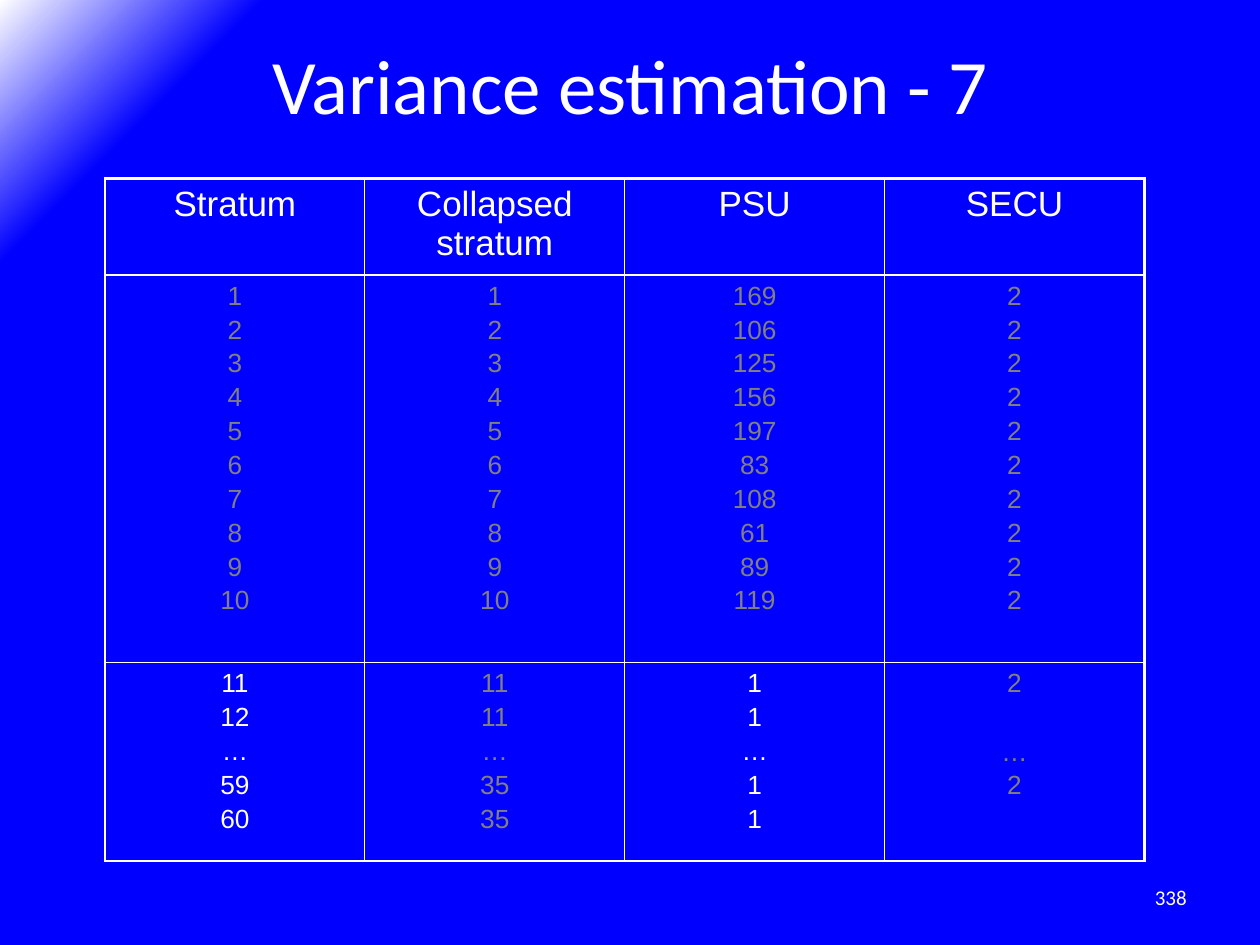
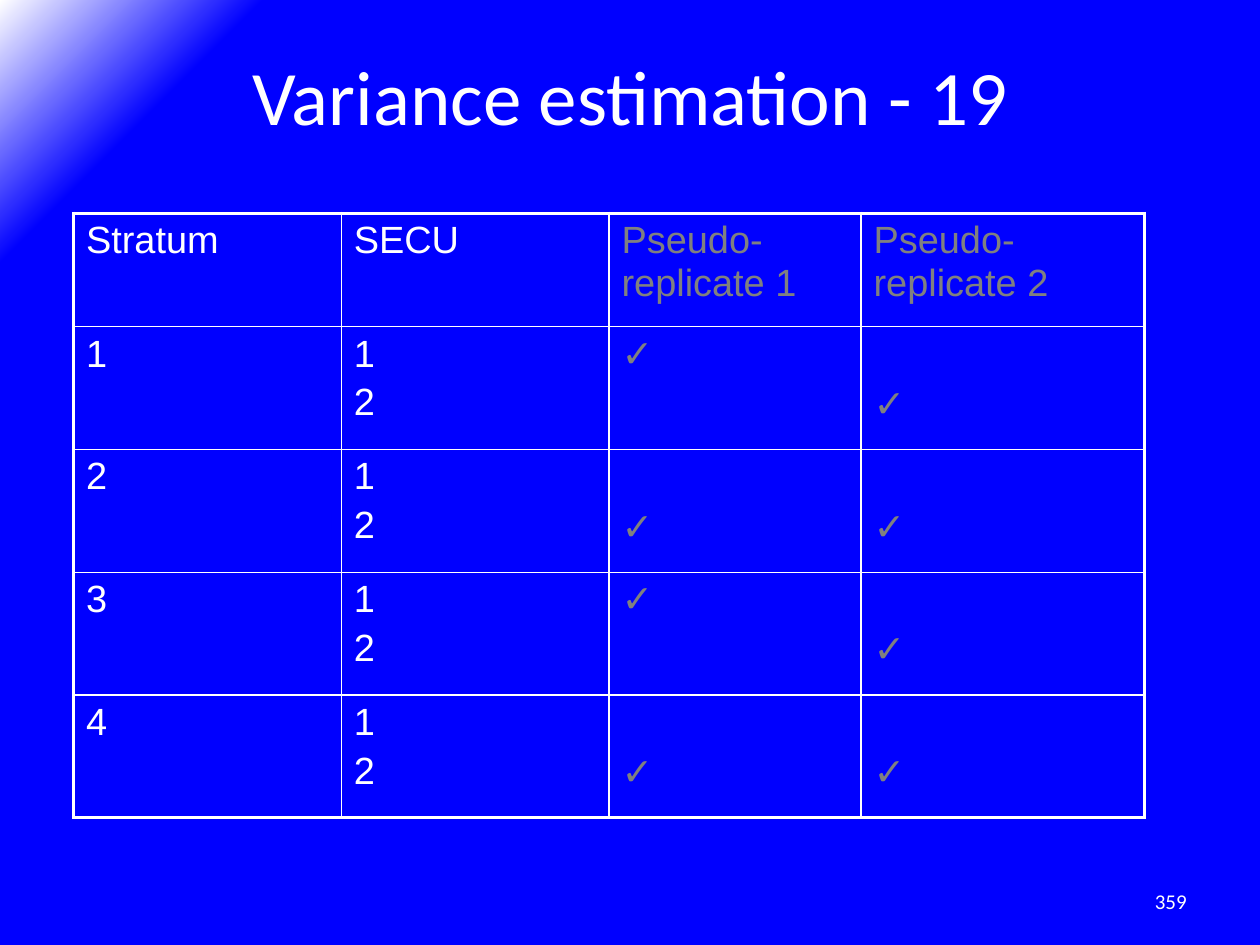
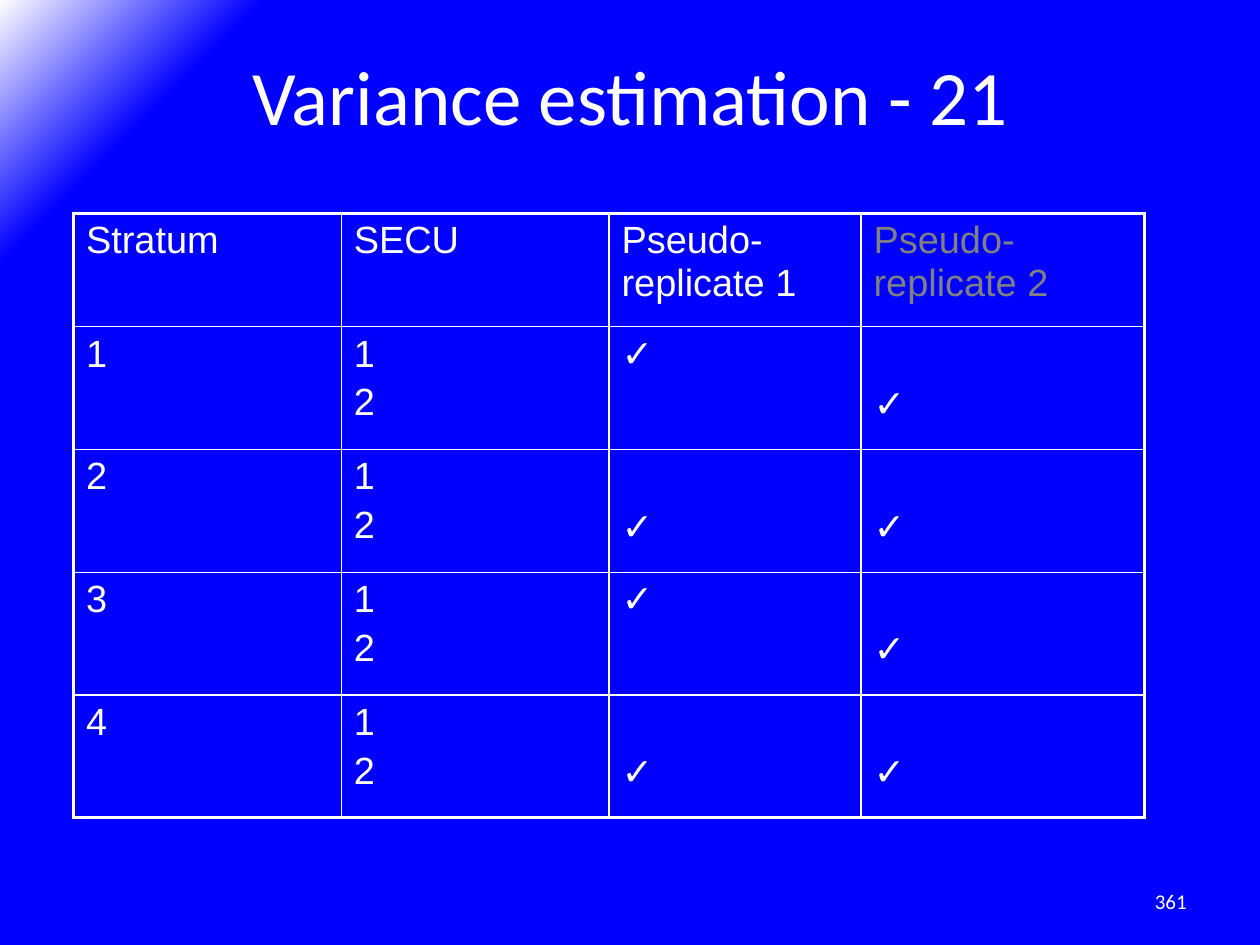
from pptx import Presentation
from pptx import util as u
from pptx.dml.color import RGBColor
from pptx.enum import text
from pptx.oxml import parse_xml
from pptx.oxml.ns import nsdecls, qn

WHITE, GREY, BLUE = "FFFFFF", "808080", "0000FF"
LEFT, CENTER, RIGHT = text.PP_ALIGN.LEFT, text.PP_ALIGN.CENTER, text.PP_ALIGN.RIGHT
TOP, MIDDLE = text.MSO_ANCHOR.TOP, text.MSO_ANCHOR.MIDDLE
INSETS = {"margin_left": 0.12, "margin_right": 0.12, "margin_top": 0.06, "margin_bottom": 0.06}
THICK, THIN = 2.25, 1
LINE_PITCH, PARA_GAP = 1.32, 0.17


def rgb(value):
    """Turn a hex string into a colour."""
    return RGBColor.from_string(value)


class Deck:
    """Holds the presentation style and the current slide."""

    def __init__(self, width, height):
        """Create the presentation with its shared background."""
        self.prs = Presentation()
        self.prs.slide_width = u.Inches(width)
        self.prs.slide_height = u.Inches(height)
        self.slide = None
        self.background()

    def background(self):
        """Put the blue gradient with its white corner on the master."""
        master = self.prs.slide_master
        master.background.fill.solid()
        bg = master.element.find(".//" + qn("p:bgPr"))
        stops = "".join(
            f'<a:gs pos="{pos * 1000}"><a:srgbClr val="{color}"/></a:gs>'
            for pos, color in ((0, BLUE), (88, BLUE), (100, WHITE)))
        bg.replace(bg[0], parse_xml(
            f'<a:gradFill {nsdecls("a")} rotWithShape="1"><a:gsLst>{stops}</a:gsLst>'
            '<a:path path="circle"><a:fillToRect l="100000" t="100000"/></a:path></a:gradFill>'))

    def new_slide(self, title, number, title_top, number_top):
        """Start a slide with its title and number."""
        self.slide = self.prs.slides.add_slide(self.prs.slide_layouts[6])
        self.text_box(title, (0.6, title_top, 10.8, 1.5), 52.8, CENTER, TOP)
        self.text_box(number, (8.6, number_top, 2.8, 0.48), 14.4, RIGHT, MIDDLE)

    def text_box(self, words, box, size, align, anchor):
        """Add one line of white Calibri text."""
        tf = self.slide.shapes.add_textbox(*map(u.Inches, box)).text_frame
        tf.word_wrap = True
        tf.vertical_anchor = anchor
        if anchor == TOP:
            self.set_insets(tf)
        self.add_text(tf.paragraphs[0], words, align, size=u.Pt(size), name="Calibri")

    def set_insets(self, target):
        """Apply the shared insets to a text frame or cell."""
        for name, value in INSETS.items():
            setattr(target, name, u.Inches(value))

    def add_text(self, p, words, align, color=WHITE, **font):
        """Fill a paragraph with one formatted run."""
        p.alignment = align
        r = p.add_run()
        r.text = words
        for name, value in {"bold": False, **font}.items():
            setattr(r.font, name, value)
        r.font.color.rgb = rgb(color)

    def table(self, box, widths, heights, rows, sizes, align):
        """Add a bordered table whose cells are (lines, colour) pairs."""
        frame = self.slide.shapes.add_table(len(rows), len(widths), *map(u.Inches, box))
        table = frame.table
        table.first_row = table.horz_banding = False
        for column, width in zip(table.columns, widths):
            column.width = u.Inches(width)
        for row, height in zip(table.rows, heights):
            row.height = u.Inches(height)
        for i, row in enumerate(rows):
            for j, (lines, color) in enumerate(row):
                cell = table.cell(i, j)
                self.cell_text(cell, lines, color, sizes[min(i, 1)], align)
                self.borders(cell, {"L": j == 0, "R": j == len(widths) - 1,
                                    "T": i == 0, "B": i == len(rows) - 1})

    def cell_text(self, cell, lines, color, size, align):
        """Fill in the lines of a cell, turning empty lines into spacing."""
        self.set_insets(cell)
        cell.fill.background()
        tf = cell.text_frame
        skipped, started = 0, False
        for line in lines:
            if not line:
                skipped += LINE_PITCH * size
                continue
            p = tf.add_paragraph() if started else tf.paragraphs[0]
            if started:
                p.space_before = u.Pt(PARA_GAP * size + skipped)
            else:
                cell.margin_top = u.Inches(INSETS["margin_top"]) + u.Pt(skipped)
            self.add_text(p, line, align, color, size=u.Pt(size), name="Arial")
            skipped, started = 0, True

    def borders(self, cell, outer):
        """Draw white cell borders, thicker on the outer edges."""
        props = cell._tc.get_or_add_tcPr()
        for i, (side, is_outer) in enumerate(outer.items()):
            width = u.Pt(THICK if is_outer else THIN)
            props.insert(i, parse_xml(
                f'<a:ln{side} {nsdecls("a")} w="{width}"><a:solidFill>'
                f'<a:srgbClr val="{WHITE}"/></a:solidFill></a:ln{side}>'))


def strata_slide(deck):
    """Build the slide of collapsed strata."""
    deck.new_slide("Variance estimation - 7", "338", 0.3, 8.3)
    numbers = [str(n) for n in range(1, 11)]
    psu = "169 106 125 156 197 83 108 61 89 119".split()
    rows = [
        [([name], WHITE) for name in ("Stratum", "Collapsed stratum", "PSU", "SECU")],
        [(lines, GREY) for lines in (numbers, numbers, psu, ["2"] * 10)],
        [(["11", "12", "…", "59", "60"], WHITE),
         (["11", "11", "…", "35", "35"], GREY),
         (["1", "1", "…", "1", "1"], WHITE),
         (["2", "", "…", "2"], "7F7F7F")],
    ]
    deck.table((1, 1.7, 9.9, 6.5), [9.9 / 4] * 4, [0.92, 3.69, 1.89], rows, (24, 18), CENTER)


def replicate_slide(deck, title, number, header_colors, check_colors):
    """Build a slide of pseudo-replicates."""
    deck.new_slide(title, number, 0.4, 8.34)
    first, second = ["✓"], ["", "✓"]
    names = ("Stratum", "SECU", "Pseudo-replicate 1", "Pseudo-replicate 2")
    rows = [[([name], color) for name, color in zip(names, (WHITE, WHITE, *header_colors))]]
    for stratum in range(1, 5):
        checks = (first if stratum % 2 else second, second)
        rows.append([([str(stratum)], WHITE), (["1", "2"], WHITE), *zip(checks, check_colors)])
    deck.table((0.7, 2.03, 10.2, 5.77), [2.55, 2.55, 2.4, 2.7], [1.08] + [1.17] * 4,
               rows, (26, 26), LEFT)


def main():
    """Build and save the slides."""
    deck = Deck(12, 9)
    strata_slide(deck)
    replicate_slide(deck, "Variance estimation - 19", "359", (GREY, GREY), (GREY, GREY))
    replicate_slide(deck, "Variance estimation - 21", "361", (WHITE, GREY), (WHITE, WHITE))
    deck.prs.save("out.pptx")


if __name__ == "__main__":
    main()
